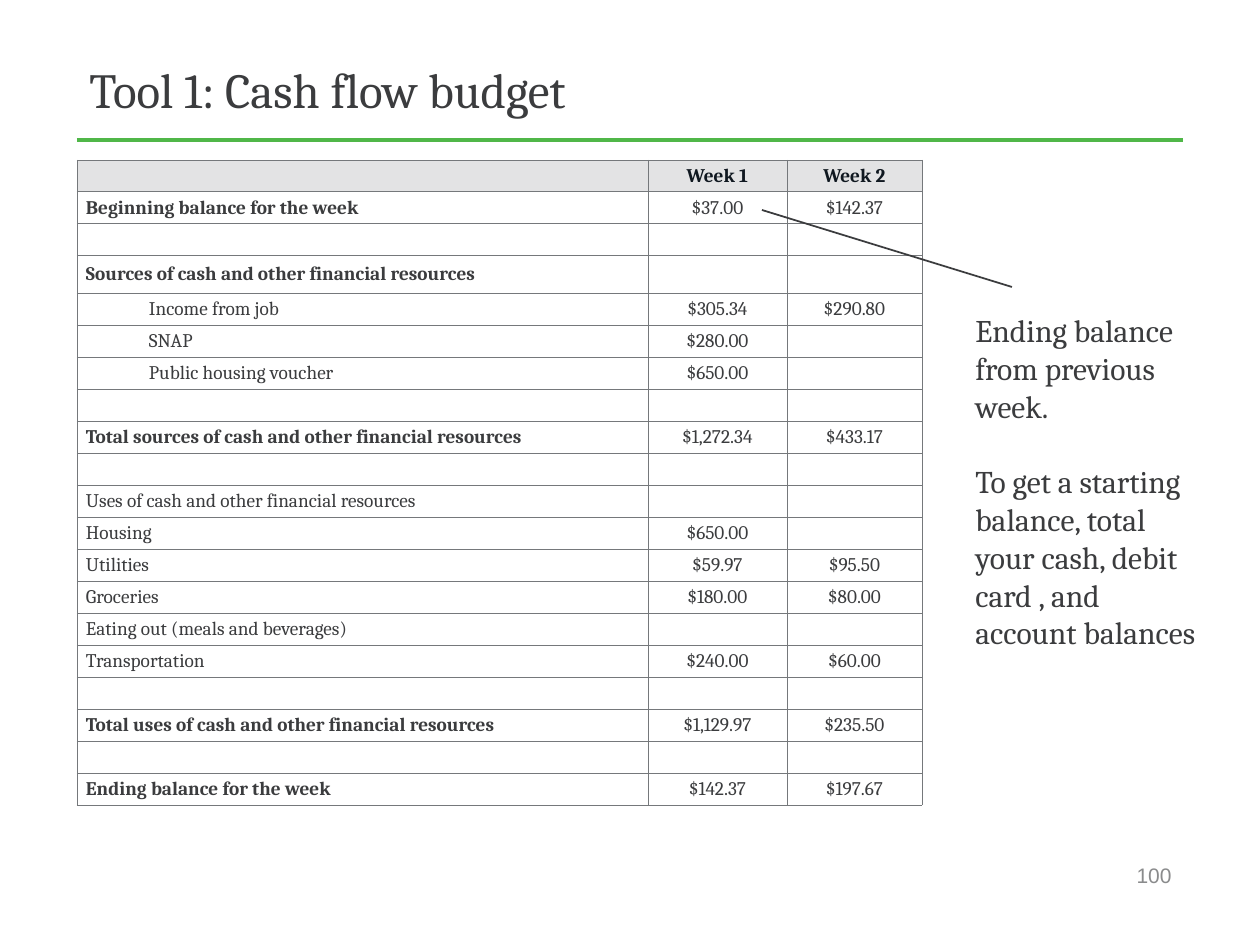
from lxml import etree
from pptx import Presentation
from pptx.dml.color import RGBColor
from pptx.enum.shapes import MSO_CONNECTOR
from pptx.enum.text import MSO_ANCHOR, MSO_AUTO_SIZE, PP_ALIGN
from pptx.oxml import parse_xml
from pptx.oxml.ns import nsdecls, qn
from pptx.util import Emu, Pt

THEME = {
    "ink": "3B3C3E", "header_ink": "101820", "header_fill": "E3E3E4",
    "border": "75787B", "rule": "50B748", "muted": "8A8B8C",
    "serif": "Cambria", "sans": "Arial",
    "title": 28, "note": 18, "number": 12, "cell": 11,
}
SCALE = 914400 / 126


def px(n):
    return Emu(round(n * SCALE))


def write(p, text, size, color="ink", font="serif", bold=False):
    r = p.add_run()
    r.text = text
    fmt = {"size": Pt(THEME[size]), "name": THEME[font], "bold": bold}
    for name, value in fmt.items():
        setattr(r.font, name, value)
    r.font.color.rgb = RGBColor.from_string(THEME[color])


prs = Presentation()
prs.slide_width, prs.slide_height = px(1260), px(945)
s = prs.slides.add_slide(prs.slide_layouts[6])

# Rule under the title, and the pointer from the opening balance to the note
lines = [
    ((77, 140, 1183, 140), "rule", 2),
    ((762, 210, 1012, 287), "ink", 1),
]
for ends, color, width in lines:
    c = s.shapes.add_connector(MSO_CONNECTOR.STRAIGHT, *map(px, ends))
    c.line.color.rgb = RGBColor.from_string(THEME[color])
    c.line.width = Pt(width)
    etree.SubElement(c._element.spPr, qn("a:effectLst"))
pointer = c

# Title, page number and note
NOTE = [
    "Ending balance from previous week.",
    "To get a starting balance, total your cash, debit card , and account balances",
]
texts = [
    ((77, 38, 1108, 102), ["Tool 1: Cash flow budget"], MSO_ANCHOR.MIDDLE,
     PP_ALIGN.LEFT, ("title",)),
    ((785, 850, 399, 50), ["100"], MSO_ANCHOR.MIDDLE,
     PP_ALIGN.RIGHT, ("number", "muted", "sans")),
    ((963, 305, 251, 394), NOTE, MSO_ANCHOR.TOP,
     PP_ALIGN.LEFT, ("note",)),
]
for box, paragraphs, anchor, align, style in texts:
    sp = s.shapes.add_textbox(*map(px, box))
    tf = sp.text_frame
    fmt = {"word_wrap": True, "vertical_anchor": anchor,
           "auto_size": MSO_AUTO_SIZE.NONE}
    for name, value in fmt.items():
        setattr(tf, name, value)
    for i, text in enumerate(paragraphs):
        p = tf.add_paragraph() if i else tf.paragraphs[0]
        p.alignment = align
        if i:
            p.space_before = Pt(21.5)
        write(p, text, *style)

# Budget rows: label, week 1, week 2, label style
BLANK = ("", "", "", "plain")
ROWS = [
    ("", "Week 1", "Week 2", "header"),
    ("Beginning balance for the week", "$37.00", "$142.37", "bold"),
    BLANK,
    ("Sources of cash and other financial resources", "", "", "bold"),
    ("Income from job", "$305.34", "$290.80", "indent"),
    ("SNAP", "$280.00", "", "indent"),
    ("Public housing voucher", "$650.00", "", "indent"),
    BLANK,
    ("Total sources of cash and other financial resources", "$1,272.34", "$433.17", "bold"),
    BLANK,
    ("Uses of cash and other financial resources", "", "", "plain"),
    ("Housing", "$650.00", "", "plain"),
    ("Utilities", "$59.97", "$95.50", "plain"),
    ("Groceries", "$180.00", "$80.00", "plain"),
    ("Eating out (meals and beverages)", "", "", "plain"),
    ("Transportation", "$240.00", "$60.00", "plain"),
    BLANK,
    ("Total uses of cash and other financial resources", "$1,129.97", "$235.50", "bold"),
    BLANK,
    ("Ending balance for the week", "$142.37", "$197.67", "bold"),
]
COLS = [571, 139, 135]
ROW_HEIGHT, ODD_HEIGHTS = 32, {0: 31, 3: 38}
heights = [ODD_HEIGHTS.get(i, ROW_HEIGHT) for i in range(len(ROWS))]

# Table, with the pointer kept in front of it
frame = s.shapes.add_table(len(ROWS), len(COLS), px(77), px(160),
                           px(sum(COLS)), px(sum(heights)))
pointer._element.addprevious(frame._element)
table = frame.table
table.first_row = table.horz_banding = False
for col, width in zip(table.columns, COLS):
    col.width = px(width)

for i, (*values, style) in enumerate(ROWS):
    table.rows[i].height = px(heights[i])
    header = style == "header"
    for j, text in enumerate(values):
        cell = table.cell(i, j)
        fmt = {"margin_left": px(9), "margin_right": px(9), "margin_top": 0,
               "margin_bottom": 0, "vertical_anchor": MSO_ANCHOR.MIDDLE}
        for name, value in fmt.items():
            setattr(cell, name, value)
        for side in "LRTB":
            cell._tc.get_or_add_tcPr().append(parse_xml(
                f'<a:ln{side} {nsdecls("a")} w="3175"><a:solidFill>'
                f'<a:srgbClr val="{THEME["border"]}"/></a:solidFill></a:ln{side}>'))
        if header:
            cell.fill.solid()
            cell.fill.fore_color.rgb = RGBColor.from_string(THEME["header_fill"])
        else:
            cell.fill.background()
        p = cell.text_frame.paragraphs[0]
        p.line_spacing = 1.07
        p.alignment = PP_ALIGN.CENTER if j else PP_ALIGN.LEFT
        if style == "indent" and j == 0:
            p._p.get_or_add_pPr().set("marL", str(px(63)))
        if text:
            write(p, text, "cell", "header_ink" if header else "ink",
                  bold=header or (style == "bold" and j == 0))
        else:
            p._p.get_or_add_endParaRPr().set("sz", str(THEME["cell"] * 100))

prs.save("out.pptx")
